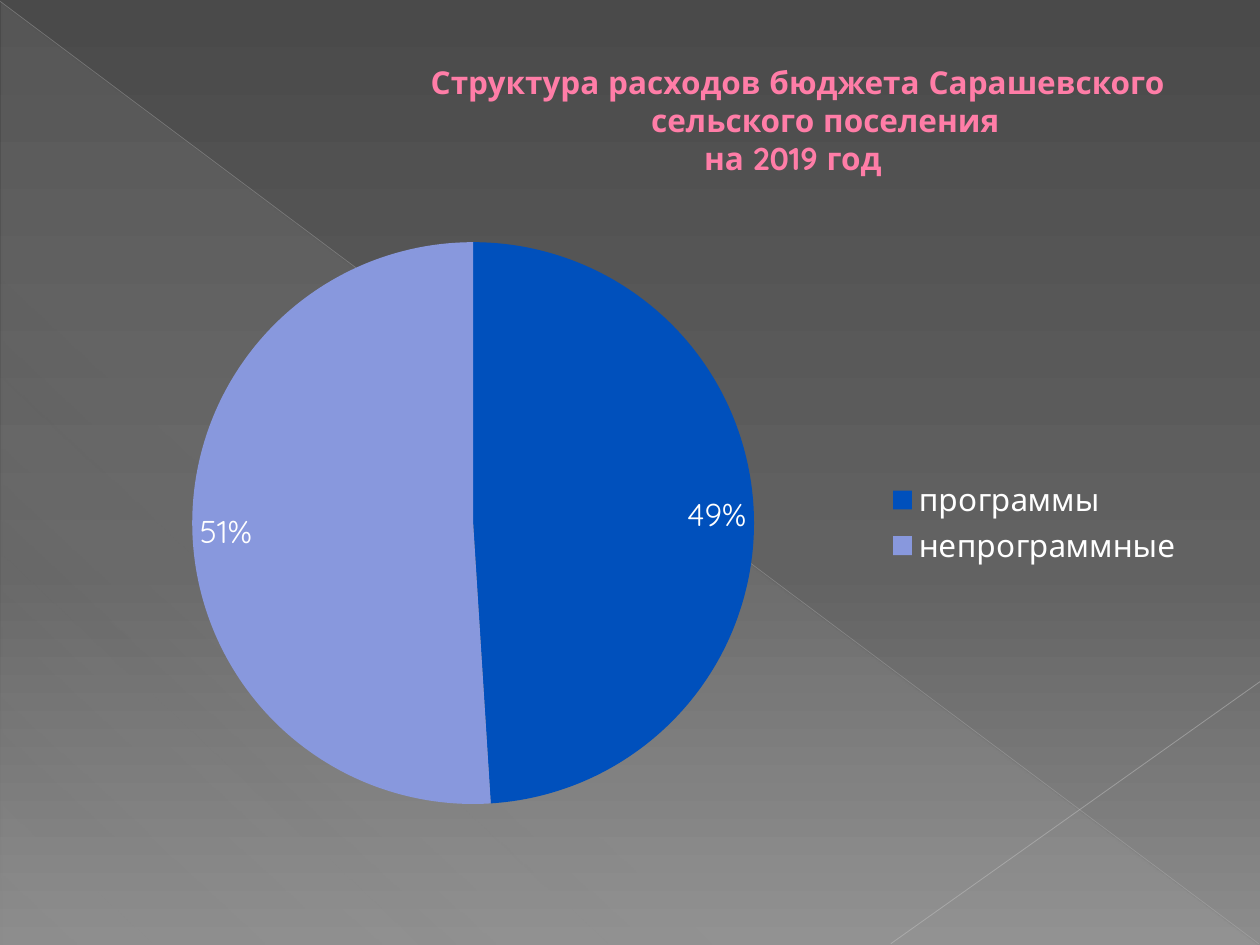
from lxml import etree
from pptx import Presentation
from pptx.chart.data import CategoryChartData
from pptx.dml.color import RGBColor
from pptx.enum.chart import XL_CHART_TYPE as Chart, XL_LABEL_POSITION as LabelPos, XL_LEGEND_POSITION as LegendPos
from pptx.enum.shapes import MSO_CONNECTOR as Conn, MSO_SHAPE as Shape
from pptx.enum.text import MSO_ANCHOR as Anchor
from pptx.oxml import parse_xml
from pptx.oxml.ns import nsdecls, qn
from pptx.util import Inches, Pt

# Content: title lines with their left edges in inches
TITLE = [
    ("Структура расходов бюджета Сарашевского", 3.42),
    ("сельского поселения", 5.17),
    ("на 2019 год", 5.59),
]
SHARES = {"программы": 0.49, "непрограммные": 0.51}

THEME = {
    "font": "Quicksand", "size": 18,
    "title": "FF7DA7", "title_edge": "B12761", "text": "FFFFFF",
    "slices": ["0050BC", "8898DD"],
    # Gradient stops: position %, colour, opacity %
    "background": [(0, "4A4A4A", 100), (60, "626262", 100), (100, "8C8C8C", 100)],
    "triangle": [(0, "D2D2D2", 10), (70, "D2D2D2", 8), (100, "D2D2D2", 1)],
}
# Decorative lines: from, to, colour, width, opacity %
LINES = [
    ((0, 0.01), (9.99, 7.49), "BFBFBF", 0.39, 35),
    ((10, 5.41), (7.07, 7.49), "C6C6C6", 0.47, 45),
]
TITLE_BOX = (0.83, 0.44, 8.67, 1.02)
CHART_BOX = (0.51, 1.78, 8.99, 4.74)
PIE_BOX = (1.53, 1.92, 4.46, 4.46)


def rgb(value):
    return RGBColor.from_string(value)


def gradient(stops, angle):
    gs = "".join(
        f'<a:gs pos="{pos * 1000}"><a:srgbClr val="{color}">'
        f'<a:alpha val="{alpha * 1000}"/></a:srgbClr></a:gs>'
        for pos, color, alpha in stops)
    return parse_xml(f'<a:gradFill {nsdecls("a")} rotWithShape="1"><a:gsLst>{gs}</a:gsLst>'
                     f'<a:lin ang="{angle * 60000}" scaled="0"/></a:gradFill>')


def set_gradient(parent, stops, angle):
    old = parent.find(qn("a:noFill"))
    parent.replace(old, gradient(stops, angle))


def add_line(slide, start, end, color, width, alpha):
    c = slide.shapes.add_connector(Conn.STRAIGHT, *map(Inches, start + end))
    c.line.color.rgb = rgb(color)
    c.line.width = Pt(width)
    clr = next(c._element.iter(qn("a:srgbClr")))
    etree.SubElement(clr, qn("a:alpha"), val=str(alpha * 1000))
    etree.SubElement(c._element.spPr, qn("a:effectLst"))


def add_title(slide):
    tf = slide.shapes.add_textbox(*map(Inches, TITLE_BOX)).text_frame
    tf.word_wrap = True
    tf.vertical_anchor = Anchor.MIDDLE
    text_left = TITLE_BOX[0] + 0.1
    for i, (text, left) in enumerate(TITLE):
        p = tf.paragraphs[0] if i == 0 else tf.add_paragraph()
        p._p.get_or_add_pPr().set("marL", str(Inches(left - text_left)))
        r = p.add_run()
        r.text = text
        r.font.name, r.font.size, r.font.bold = THEME["font"], Pt(THEME["size"]), True
        r.font.color.rgb = rgb(THEME["title"])
        r._r.get_or_add_rPr().insert(0, parse_xml(
            f'<a:ln {nsdecls("a")} w="{Pt(0.5)}"><a:solidFill>'
            f'<a:srgbClr val="{THEME["title_edge"]}"/></a:solidFill></a:ln>'))


def add_pie(slide):
    data = CategoryChartData(number_format="0%")
    data.categories = list(SHARES)
    data.add_series("Series 1", list(SHARES.values()))
    chart = slide.shapes.add_chart(Chart.PIE, *map(Inches, CHART_BOX), data).chart
    chart.has_title = False
    chart.font.name, chart.font.size = THEME["font"], Pt(THEME["size"])
    chart.font.color.rgb = rgb(THEME["text"])
    chart.has_legend = True
    chart.legend.position = LegendPos.RIGHT
    chart.legend.include_in_layout = False

    plot = chart.plots[0]
    plot.vary_by_categories = True
    for i, color in enumerate(THEME["slices"]):
        fill = plot.series[0].points[i].format.fill
        fill.solid()
        fill.fore_color.rgb = rgb(color)
    plot.has_data_labels = True
    labels = plot.data_labels
    labels.show_value, labels.show_percentage = True, False
    labels.number_format, labels.number_format_is_linked = "0%", False
    labels.position = LabelPos.INSIDE_END

    # Place the pie inside the chart frame
    cx, cy, cw, ch = CHART_BOX
    px, py, pw, ph = PIE_BOX
    parts = {"x": (px - cx) / cw, "y": (py - cy) / ch, "w": pw / cw, "h": ph / ch}
    sizes = "".join(f'<c:{k} val="{v:.3f}"/>' for k, v in parts.items())
    area = chart._chartSpace.chart.plotArea
    for old in area.findall(qn("c:layout")):
        area.remove(old)
    area.insert(0, parse_xml(
        f'<c:layout {nsdecls("c")}><c:manualLayout><c:layoutTarget val="inner"/>'
        f'<c:xMode val="edge"/><c:yMode val="edge"/>{sizes}</c:manualLayout></c:layout>'))


def main():
    prs = Presentation()
    prs.slide_width, prs.slide_height = Inches(10), Inches(7.5)
    slide = prs.slides.add_slide(prs.slide_layouts[6])

    # Backdrop
    slide.background.fill.background()
    set_gradient(next(slide._element.iter(qn("p:bgPr"))), THEME["background"], 90)
    sp = slide.shapes.add_shape(Shape.RIGHT_TRIANGLE, *map(Inches, (0.01, 0.02, 9.98, 7.48)))
    sp.shadow.inherit = False
    sp.line.fill.background()
    sp.fill.background()
    set_gradient(sp._element.spPr, THEME["triangle"], 133)
    for line in LINES:
        add_line(slide, *line)

    # Title and chart
    add_title(slide)
    add_pie(slide)
    prs.save("out.pptx")


if __name__ == "__main__":
    main()
